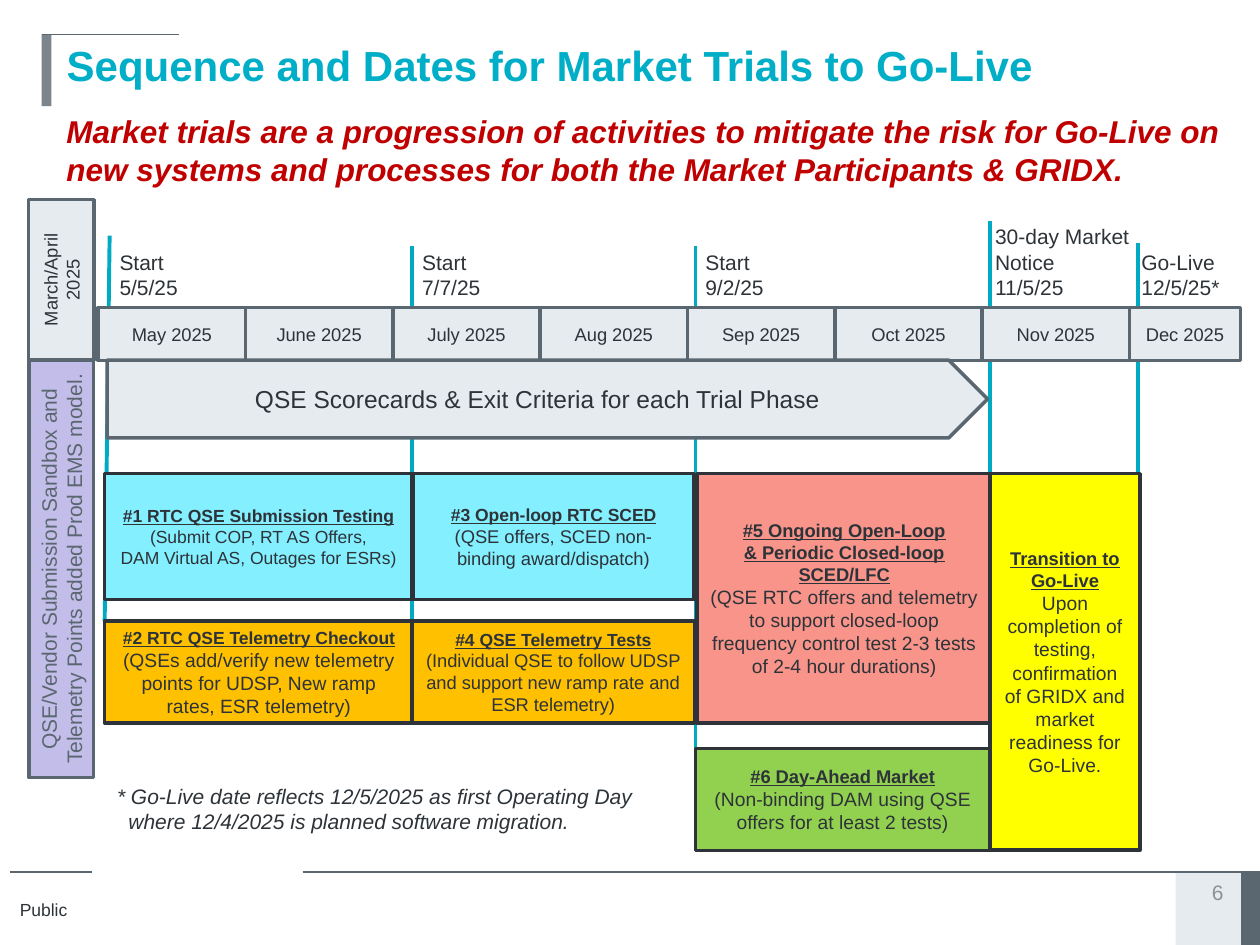
"""Build the market trials timeline slide."""
from lxml.etree import SubElement
from pptx import Presentation
from pptx.dml.color import RGBColor
from pptx.enum.shapes import MSO_CONNECTOR as CONN, MSO_SHAPE as SHAPE
from pptx.enum.text import MSO_ANCHOR as ANCHOR, MSO_AUTO_SIZE as AUTO, PP_ALIGN as ALIGN
from pptx.oxml.ns import qn
from pptx.util import Cm, Pt

COLORS = {
    "text": "2D3338", "slate": "5B6770", "mist": "E6EBF0", "gray": "7C858C",
    "number": "8F9091", "title": "00AEC7", "teal": "00AAC3", "red": "C00000",
    "cyan": "83EFFF", "salmon": "F8948A", "orange": "FFC000",
    "green": "92D050", "yellow": "FFFF00", "lilac": "C3BDE9",
}

MONTHS = ["May", "June", "July", "Aug", "Sep", "Oct", "Nov", "Dec"]
MONTH_LEFT, MONTH_PITCH = 1.98, 2.97

MILESTONE_LINES = [
    (2.21, 4.75, 2.11, 12.52),
    (22.94, 4.9, 22.94, 9.65),
    (19.96, 4.45, 19.96, 9.98),
    (14.02, 4.95, 14.02, 16.15),
    (8.31, 4.95, 8.31, 12.7),
]

MILESTONE_LABELS = [
    ((2.16, 4.9, 2.64, 1.27), ["Start", "5/5/25"]),
    ((8.26, 4.9, 2.64, 1.27), ["Start", "7/7/25"]),
    ((13.97, 4.9, 2.64, 1.27), ["Start", "9/2/25"]),
    ((19.81, 4.39, 3.35, 1.8), ["30-day Market Notice", "11/5/25"]),
    ((22.76, 4.9, 2.64, 1.27), ["Go-Live", "12/5/25*"]),
]

TRIALS = [
    ((2.11, 9.55, 6.2, 2.54), "cyan", 10, ["#1 RTC QSE Submission Testing"],
     10, ["(Submit COP, RT AS Offers,", "DAM Virtual AS, Outages for ESRs)"]),
    ((8.33, 9.55, 5.66, 2.54), "cyan", 10, ["#3 Open-loop RTC SCED"],
     10.5, ["(QSE offers, SCED non-binding award/dispatch)"]),
    ((14.05, 9.55, 5.94, 5.03), "salmon", 10.5,
     ["#5 Ongoing Open-Loop", "& Periodic Closed-loop SCED/LFC"],
     11, ["(QSE RTC offers and telemetry to support closed-loop frequency "
          "control test 2-3 tests of 2-4 hour durations)"]),
    ((2.11, 12.52, 6.22, 2.06), "orange", 10, ["#2 RTC QSE Telemetry Checkout"],
     11, ["(QSEs add/verify new telemetry points for UDSP, New ramp rates, ESR telemetry)"]),
    ((8.31, 12.52, 5.69, 2.06), "orange", 10, ["#4 QSE Telemetry Tests"],
     10.5, ["(Individual QSE to follow UDSP and support new ramp rate and ESR telemetry)"]),
    ((14.02, 15.09, 5.94, 2.06), "green", 10.5, ["#6 Day-Ahead Market"],
     11, ["(Non-binding DAM using QSE offers for at least 2 tests)"]),
    ((19.96, 9.55, 3.02, 7.59), "yellow", 10.5, ["Transition to Go-Live"],
     11, ["Upon completion of testing, confirmation of GRIDX and market "
          "readiness for Go-Live."]),
]


def rgb(name):
    """Return the named colour."""
    return RGBColor.from_string(COLORS[name])


def write(tf, lines, size, color="text", align=ALIGN.LEFT, bold=False,
          italic=False, underline=False):
    """Append lines as paragraphs in one format and return them."""
    added = []
    for line in lines:
        p = tf.add_paragraph() if tf.text else tf.paragraphs[0]
        p.text = line
        p.alignment = align
        font = p.font
        font.name, font.size = "Arial", Pt(size)
        font.bold, font.italic, font.underline = bold, italic, underline
        font.color.rgb = rgb(color)
        added.append(p)
    return added


def add_label(s, box, lines, size, anchor=ANCHOR.TOP, **style):
    """Add a wrapping text box."""
    tf = s.shapes.add_textbox(*map(Cm, box)).text_frame
    tf.word_wrap = True
    tf.vertical_anchor = anchor
    return write(tf, lines, size, **style)


def add_box(s, box, fill, line=None, width=2, kind=SHAPE.RECTANGLE):
    """Add a filled shape with an optional outline."""
    sp = s.shapes.add_shape(kind, *map(Cm, box))
    sp.shadow.inherit = False
    sp.fill.solid()
    sp.fill.fore_color.rgb = rgb(fill)
    if line:
        sp.line.color.rgb = rgb(line)
        sp.line.width = Pt(width)
    else:
        sp.line.fill.background()
    sp.text_frame.word_wrap = True
    sp.text_frame.vertical_anchor = ANCHOR.MIDDLE
    return sp


def add_text_box(s, box, fill, lines, size, color="text", kind=SHAPE.RECTANGLE):
    """Add a slate-outlined shape with centred text."""
    sp = add_box(s, box, fill, "slate", kind=kind)
    write(sp.text_frame, lines, size, color, ALIGN.CENTER)
    return sp


def add_trial(s, box, fill, head_size, heads, body_size, body):
    """Add a trial phase with an underlined heading."""
    tf = add_box(s, box, fill, "text").text_frame
    write(tf, heads, head_size, align=ALIGN.CENTER, bold=True, underline=True)
    write(tf, body, body_size, align=ALIGN.CENTER)


def add_line(s, ends, color, width):
    """Add a straight line without shadow."""
    cxn = s.shapes.add_connector(CONN.STRAIGHT, *map(Cm, ends))
    cxn.line.color.rgb = rgb(color)
    cxn.line.width = Pt(width)
    SubElement(cxn._element.spPr, qn("a:effectLst"))


def add_frame(s):
    """Add the footer, page number and title accent."""
    add_box(s, (23.7, 17.58, 1.47, 1.47), "mist")
    add_box(s, (25.04, 17.58, 0.36, 1.47), "slate", "slate", 0.75)
    add_box(s, (0.84, 0.69, 0.2, 1.45), "gray")
    for ends in [(0.2, 17.58, 1.85, 17.58), (6.1, 17.58, 25.15, 17.58),
                 (0.84, 0.69, 3.61, 0.69)]:
        add_line(s, ends, "slate", 0.75)
    add_label(s, (0.15, 18, 8.05, 0.7), ["Public"], 10)
    add_label(s, (23.7, 17.58, 1.7, 0.81), ["6"], 12, ANCHOR.MIDDLE,
              color="number", align=ALIGN.CENTER)


def add_headings(s):
    """Fill the title and add the message below it."""
    title = s.shapes.title
    title.left, title.top, title.width, title.height = map(Cm, (1.09, 0.66, 23.57, 1.57))
    tf = title.text_frame
    tf.auto_size = AUTO.NONE
    tf.vertical_anchor = ANCHOR.TOP
    write(tf, ["Sequence and Dates for Market Trials to Go-Live"], 24, "title", bold=True)
    add_label(s, (1.09, 2.13, 23.95, 1.8),
              ["Market trials are a progression of activities to mitigate the risk for "
               "Go-Live on new systems and processes for both the Market Participants & GRIDX."],
              18, color="red", bold=True, italic=True)


def add_timeline(s):
    """Add the months, the arrow and the milestone labels."""
    for i, month in enumerate(MONTHS):
        width = 2.24 if month == "Dec" else MONTH_PITCH
        add_text_box(s, (MONTH_LEFT + i * MONTH_PITCH, 6.2, width, 1.07), "mist",
                     [f"{month} 2025"], 10.5)
    add_text_box(s, (2.16, 7.26, 17.75, 1.57), "mist",
                 ["QSE Scorecards & Exit Criteria for each Trial Phase"], 14,
                 kind=SHAPE.PENTAGON)
    for box, lines in MILESTONE_LABELS:
        add_label(s, box, lines, 12)


def add_side_bars(s):
    """Add the two upward-reading bars at the left."""
    early = add_text_box(s, (-0.38, 4.98, 3.23, 1.32), "mist", ["March/April", "2025"], 10.5)
    sandbox = add_text_box(s, (-2.97, 10.82, 8.41, 1.3), "lilac",
                           ["QSE/Vendor Submission Sandbox and Telemetry Points "
                            "added Prod EMS model."], 12, "slate")
    early.rotation = sandbox.rotation = 270


def main():
    """Build and save the slide."""
    prs = Presentation()
    prs.slide_width, prs.slide_height = Cm(25.4), Cm(19.05)
    s = prs.slides.add_slide(prs.slide_layouts[5])
    add_frame(s)
    add_headings(s)
    for ends in MILESTONE_LINES:
        add_line(s, ends, "teal", 2.25)
    for trial in TRIALS:
        add_trial(s, *trial)
    add_timeline(s)
    note = add_label(s, (2.11, 15.67, 11.68, 1.27),
                     ["* Go-Live date reflects 12/5/2025 as first Operating Day",
                      "where 12/4/2025 is planned software migration."], 12, italic=True)
    note[1]._p.get_or_add_pPr().set("marL", str(Cm(0.23)))
    add_side_bars(s)
    prs.save("out.pptx")


if __name__ == "__main__":
    main()
